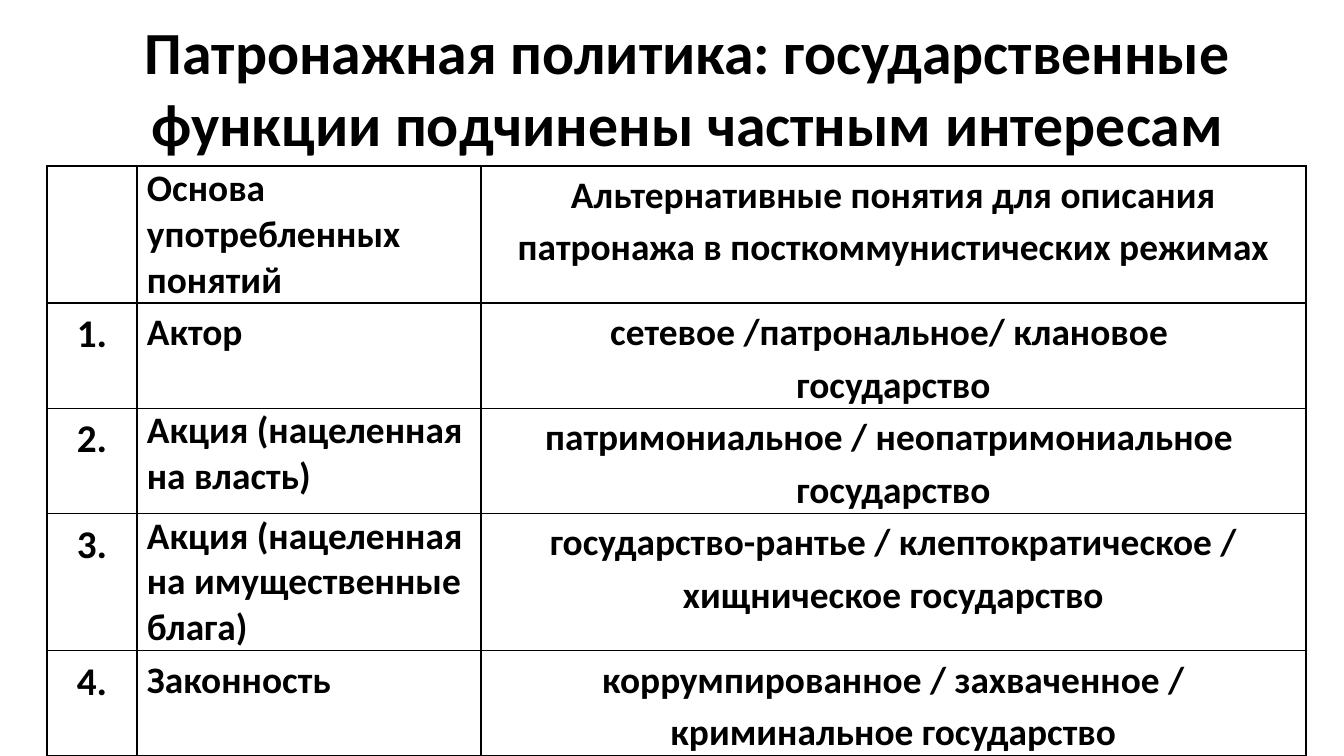
from lxml import etree
from pptx import Presentation
from pptx.dml.color import RGBColor
from pptx.enum.text import MSO_ANCHOR, MSO_AUTO_SIZE, PP_ALIGN as Align
from pptx.oxml.ns import qn
from pptx.util import Pt

EMU_PER_PX = 914400 / 134.4
FONT = "Calibri"
BLACK = "000000"
TITLE = "Пaтронажная политика: государственные функции подчинены частным интересам"
COLUMN_WIDTHS = (90, 344, 825)
# Height, number, basis, alternative concepts
ROWS = [
    (137, "", "Основа употребленных понятий",
     "Aльтернативные понятия для описания пaтронажа в посткоммунистических рeжимах"),
    (105, "1.", "Aктор", "cетевое /патрональное/ клановое \nгосударство"),
    (105, "2.", "Aкция (нацеленная на власть)",
     "патримониальное / неопатримониальное \nгосударство"),
    (137, "3.", "Aкция (нацеленная на имущественные блага)",
     "государство-рантье / клептократическое / хищническое государство"),
    (105, "4.", "Законность",
     "коррумпированное / захваченное / криминальное государство"),
]
SINGLE_WORD_BASES = ("Aктор", "Законность")


def px(length):
    return round(length * EMU_PER_PX)


def color(value):
    return RGBColor.from_string(value)


def format_text(text_frame, size, alignment, spacing=None):
    for paragraph in text_frame.paragraphs:
        paragraph.alignment = alignment
        paragraph.line_spacing = spacing
        for run in paragraph.runs:
            run.font.name = FONT
            run.font.size = Pt(size)
            run.font.bold = True
            run.font.color.rgb = color(BLACK)


def add_title(slide):
    title = slide.shapes.title
    title.left, title.top, title.width, title.height = px(16), px(8), px(1344), px(148)
    text_frame = title.text_frame
    text_frame.text = TITLE
    text_frame.word_wrap = True
    text_frame.auto_size = MSO_AUTO_SIZE.NONE
    text_frame.vertical_anchor = MSO_ANCHOR.TOP
    format_text(text_frame, 32, Align.CENTER)


def set_borders(cell):
    properties = cell._tc.get_or_add_tcPr()
    for index, side in enumerate(("a:lnL", "a:lnR", "a:lnT", "a:lnB")):
        line = etree.Element(qn(side), w=str(Pt(1)))
        fill = etree.SubElement(line, qn("a:solidFill"))
        etree.SubElement(fill, qn("a:srgbClr"), val=BLACK)
        properties.insert(index, line)


def fill_cell(cell, text, size, alignment, spacing):
    cell.fill.background()
    set_borders(cell)
    cell.margin_left = cell.margin_right = px(10)
    cell.margin_top = cell.margin_bottom = 0
    cell.text_frame.text = text
    format_text(cell.text_frame, size, alignment, spacing)


def add_concept_table(slide):
    frame = slide.shapes.add_table(
        len(ROWS), len(COLUMN_WIDTHS), px(47), px(166),
        px(sum(COLUMN_WIDTHS)), px(sum(row[0] for row in ROWS)))
    table = frame.table
    table.first_row = table.horz_banding = False
    for column, width in zip(table.columns, COLUMN_WIDTHS):
        column.width = px(width)
    for index, (height, number, basis, concepts) in enumerate(ROWS):
        table.rows[index].height = px(height)
        basis_alignment = Align.JUSTIFY if index == 0 else Align.LEFT
        basis_spacing = 1.15 if basis in SINGLE_WORD_BASES else None
        fill_cell(table.cell(index, 0), number, 21, Align.CENTER, 1.15)
        fill_cell(table.cell(index, 1), basis, 20, basis_alignment, basis_spacing)
        fill_cell(table.cell(index, 2), concepts, 20, Align.CENTER, 1.15)


def main():
    presentation = Presentation()
    presentation.slide_width, presentation.slide_height = px(1344), px(756)
    slide = presentation.slides.add_slide(presentation.slide_layouts[5])
    add_title(slide)
    add_concept_table(slide)
    presentation.save("out.pptx")


if __name__ == "__main__":
    main()
